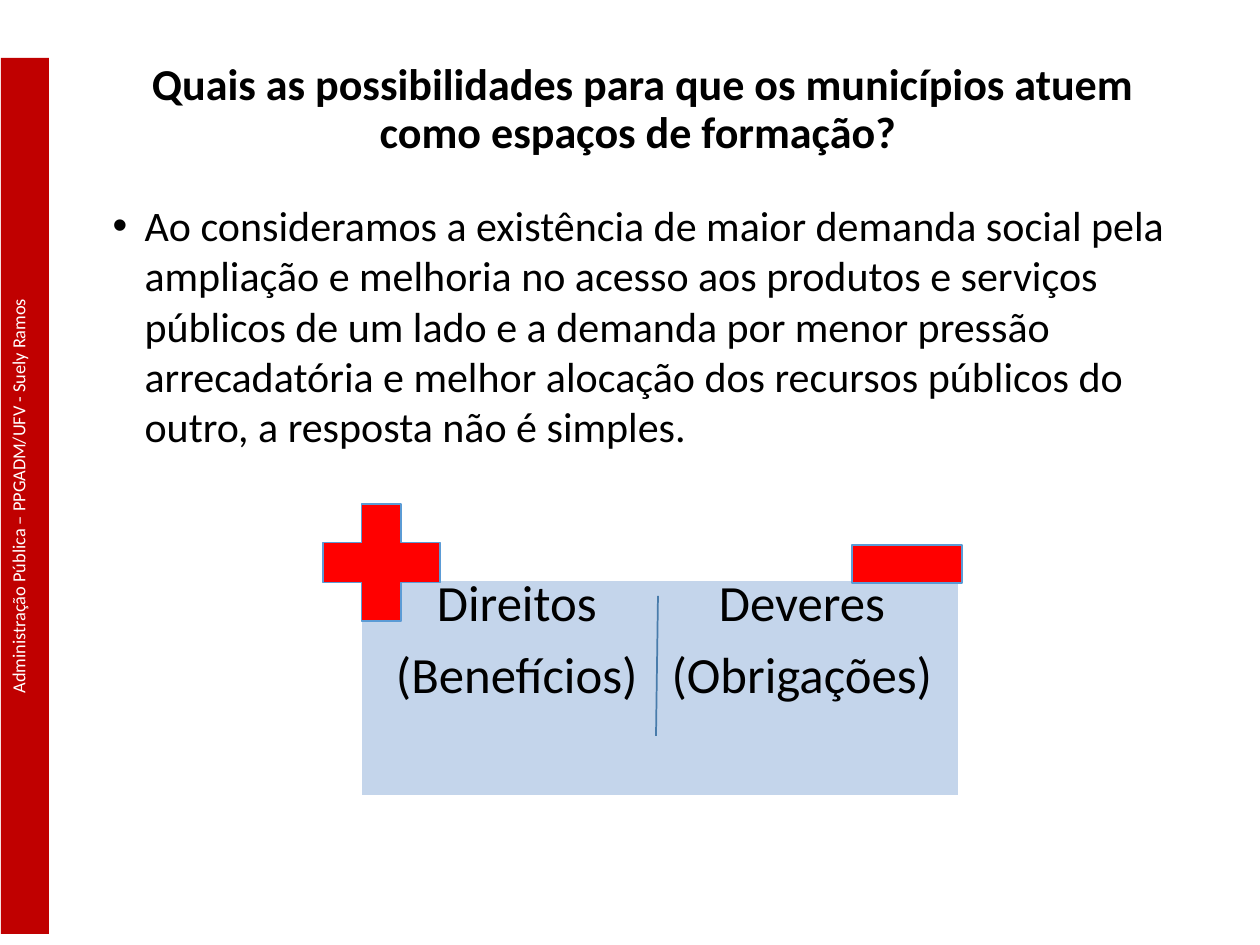
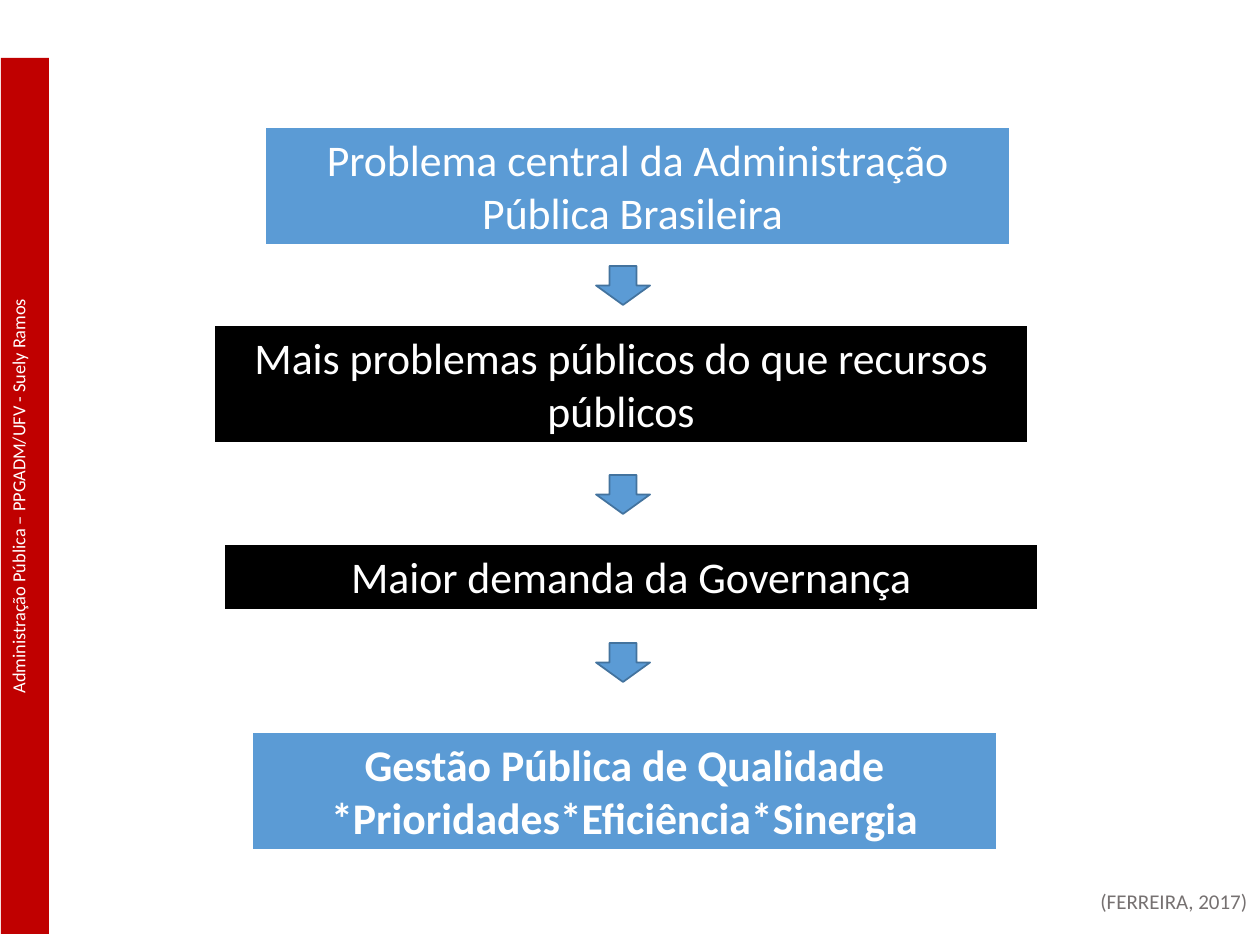
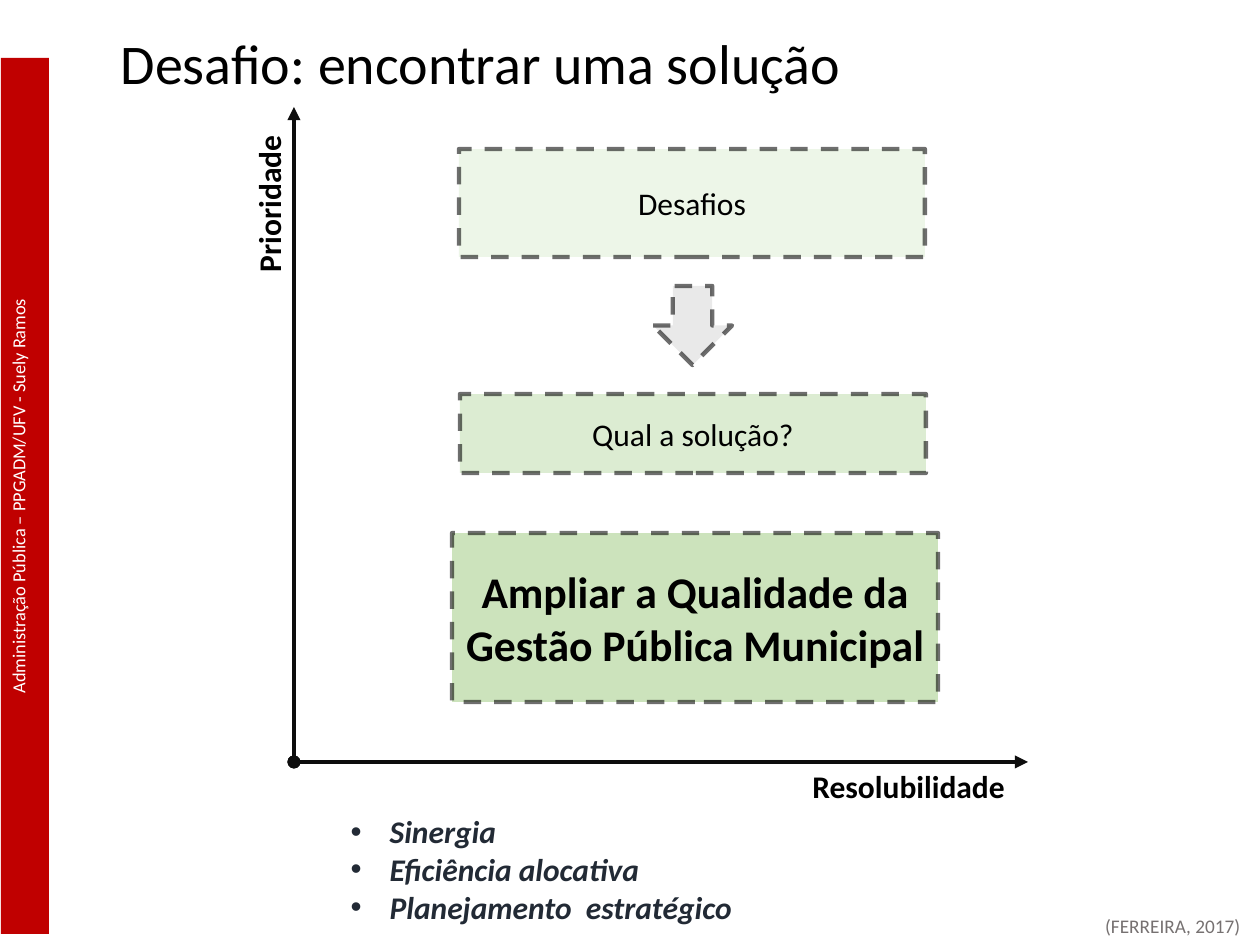
from dataclasses import dataclass

from lxml import etree
from pptx import Presentation
from pptx import util as u
from pptx.dml.color import RGBColor
from pptx.enum import dml, shapes, text
from pptx.oxml.ns import qn

PX = 914400 / 126


@dataclass(frozen=True)
class Theme:
    font: str = "Calibri"
    black: str = "000000"
    white: str = "FFFFFF"
    band: str = "C00000"
    blue: str = "5B9BD5"
    blue_edge: str = "43739E"
    panel: str = "C4D5EB"
    divider: str = "497CAB"
    sign: str = "FF0000"
    axis: str = "0D0D0D"
    pale_green: str = "E2F0D9"
    light_green: str = "C5E0B4"
    green: str = "A9D18E"
    gray: str = "DBDBDB"
    list_ink: str = "222A35"
    citation: str = "767171"
    band_size: float = 10.5
    question_size: float = 25.2
    title_size: float = 32
    body_size: float = 24
    column_size: float = 29
    step_size: float = 25
    label_size: float = 18


theme = Theme()
CENTER, LEFT, RIGHT = text.PP_ALIGN.CENTER, text.PP_ALIGN.LEFT, text.PP_ALIGN.RIGHT
TOP, MIDDLE = text.MSO_ANCHOR.TOP, text.MSO_ANCHOR.MIDDLE
RECTANGLE, DOWN = shapes.MSO_SHAPE.RECTANGLE, shapes.MSO_SHAPE.DOWN_ARROW


def place(box, at, fill=None, edge=None, weight=1, opacities=()):
    """Move a shape to a px rectangle, then paint its fill and edge."""
    box.left, box.top, box.width, box.height = [u.Emu(round(v * PX)) for v in at]
    if fill:
        box.shadow.inherit = False
        box.fill.solid()
        box.fill.fore_color.rgb = RGBColor.from_string(fill)
        if edge:
            box.line.color.rgb = RGBColor.from_string(edge)
            box.line.width = u.Pt(weight)
        else:
            box.line.fill.background()
    colors = list(box.element.spPr.iter(qn("a:srgbClr")))
    for color, percent in zip(colors, opacities):
        etree.SubElement(color, qn("a:alpha")).set("val", str(percent * 1000))
    return box


def write(box, lines, size, color=theme.black, align=CENTER, anchor=TOP,
          bold=False, italic=False, spacing=1.0, after=0, hanging=0):
    """Write one paragraph per line in a single style."""
    frame = box.text_frame
    frame.word_wrap = True
    frame.auto_size = text.MSO_AUTO_SIZE.NONE
    frame.vertical_anchor = anchor
    for index, line in enumerate(lines):
        para = frame.add_paragraph() if index else frame.paragraphs[0]
        para.alignment = align
        para.line_spacing = spacing
        para.space_before, para.space_after = u.Pt(0), u.Pt(after)
        if hanging:
            indent = round(hanging * PX)
            properties = para._p.get_or_add_pPr()
            properties.set("marL", str(indent))
            properties.set("indent", str(-indent))
            etree.SubElement(properties, qn("a:buChar")).set("char", "•")
        span = para.add_run()
        span.text = line
        span.font.name, span.font.size = theme.font, u.Pt(size)
        span.font.bold, span.font.italic = bold, italic
        span.font.color.rgb = RGBColor.from_string(color)


deck = Presentation()
deck.slide_width, deck.slide_height = u.Inches(10), u.Inches(7.5)
content_layout, blank_layout = deck.slide_layouts[1], deck.slide_layouts[6]
question, chain, challenge = [
    deck.slides.add_slide(layout)
    for layout in (content_layout, blank_layout, content_layout)]

# Side band, moved to the master so that every slide shows it
band = place(question.shapes.add_shape(RECTANGLE, 0, 0, 0, 0),
             (1, 58, 48, 876), theme.band)
write(band, ["Administração Pública – PPGADM/UFV - Suely Ramos"],
      theme.band_size, theme.white)
band.text_frame._txBody.bodyPr.set("vert", "vert270")
deck.slide_master.shapes.element.append(band.element)

# Citations
for page, at, size in ((chain, (1014, 882, 246, 38), 12),
                       (challenge, (1007, 908, 246, 37), 11)):
    citation = place(page.shapes.add_textbox(0, 0, 0, 0), at)
    write(citation, ["(FERREIRA, 2017)"], size, theme.citation, RIGHT)

# Slide 1: question and answer
write(place(question.shapes.title, (100, 57, 1086, 107)),
      ["Quais as possibilidades para que os municípios atuem como espaços de formação? "],
      theme.question_size, anchor=MIDDLE, bold=True, spacing=0.9)
write(place(question.placeholders[1], (100, 193, 1086, 301)),
      ["Ao consideramos a existência de maior demanda social pela ampliação e "
       "melhoria no acesso aos produtos e serviços públicos de um lado e a demanda "
       "por menor pressão arrecadatória e melhor alocação dos recursos públicos do "
       "outro, a resposta não é simples."],
      theme.body_size, align=LEFT, hanging=32)

# Slide 1: rights against duties
place(question.shapes.add_shape(RECTANGLE, 0, 0, 0, 0),
      (361, 580, 598, 216), theme.panel, theme.white)
for index, lines in enumerate((["Direitos", "(Benefícios)"],
                               ["Deveres", "(Obrigações)"])):
    column = place(question.shapes.add_textbox(0, 0, 0, 0),
                   (378 + 285 * index, 570, 278, 265))
    frame = column.text_frame
    frame.margin_left = frame.margin_right = u.Inches(0.06)
    frame.margin_top = frame.margin_bottom = u.Inches(0.06)
    write(column, lines, theme.column_size, spacing=0.9, after=10)
plus = place(question.shapes.add_shape(shapes.MSO_SHAPE.CROSS, 0, 0, 0, 0),
             (323, 504, 117, 117), theme.sign, theme.blue)
plus.adjustments[0] = 0.33
place(question.shapes.add_shape(RECTANGLE, 0, 0, 0, 0),
      (852, 545, 110, 38), theme.sign, theme.blue)

# Slide 2: chain of boxes
for at, fill, lines, bold in (
        ((265, 127, 745, 118), theme.blue,
         ["Problema central da Administração Pública Brasileira "], False),
        ((214, 325, 814, 118), theme.black,
         ["Mais problemas públicos do que recursos públicos"], False),
        ((224, 544, 814, 66), theme.black, ["Maior demanda da Governança"], False),
        ((252, 732, 745, 118), theme.blue,
         ["Gestão Pública de Qualidade", "*Prioridades*Eficiência*Sinergia"], True)):
    step = place(chain.shapes.add_shape(RECTANGLE, 0, 0, 0, 0),
                 at, fill, theme.white, 1.5)
    write(step, lines, theme.step_size, theme.white, bold=bold)
for top in (266, 475, 643):
    place(chain.shapes.add_shape(DOWN, 0, 0, 0, 0),
          (596, top, 54, 39), theme.blue, theme.blue_edge)

# Slide 3: title and list
write(place(challenge.shapes.title, (108, 20, 1086, 93)),
      ["Desafio: encontrar uma solução"], theme.title_size,
      align=LEFT, anchor=MIDDLE, spacing=0.9)
write(place(challenge.placeholders[1], (338, 806, 630, 127), theme.white),
      ["Sinergia", "Eficiência alocativa", "Planejamento  estratégico"],
      theme.label_size, theme.list_ink, LEFT, bold=True, italic=True, hanging=39)

# Divider of slide 1 and axes of slide 3
for page, ends, color, weight, arrow in (
        (question, (658, 596, 656, 736), theme.divider, 1, False),
        (challenge, (294, 762, 294, 107), theme.axis, 2.5, True),
        (challenge, (294, 762, 1028, 762), theme.axis, 2.5, True)):
    line = page.shapes.add_connector(shapes.MSO_CONNECTOR.STRAIGHT,
                                     *[u.Emu(round(v * PX)) for v in ends])
    line.line.color.rgb = RGBColor.from_string(color)
    line.line.width = u.Pt(weight)
    if arrow:
        stroke = line.line._get_or_add_ln()
        etree.SubElement(stroke, qn("a:headEnd")).set("type", "oval")
        etree.SubElement(stroke, qn("a:tailEnd")).set("type", "triangle")
    etree.SubElement(line.element.spPr, qn("a:effectLst"))

# Slide 3: axis labels
for label, at, turn in (("Prioridade", (179, 170, 179, 50), 270),
                        ("Resolubilidade", (800, 761, 238, 50), 0)):
    axis_label = place(challenge.shapes.add_textbox(0, 0, 0, 0), at)
    axis_label.rotation = turn
    write(axis_label, [label], theme.label_size, align=LEFT, bold=True)

# Slide 3: dashed boxes and arrow
for kind, at, fill, label, size, bold in (
        (RECTANGLE, (459, 149, 466, 108), theme.pale_green,
         "Desafios", theme.label_size, False),
        (DOWN, (653, 286, 79, 79), theme.gray, None, None, False),
        (RECTANGLE, (460, 394, 466, 79), theme.light_green,
         "Qual a solução?", theme.label_size, False),
        (RECTANGLE, (452, 533, 486, 169), theme.green,
         "Ampliar a Qualidade da Gestão Pública Municipal ", theme.step_size, True)):
    box = place(challenge.shapes.add_shape(kind, 0, 0, 0, 0),
                at, fill, theme.black, 2.5, (59, 56))
    box.line.dash_style = dml.MSO_LINE.DASH
    if label:
        write(box, [label], size, anchor=MIDDLE, bold=bold)

deck.save("out.pptx")
